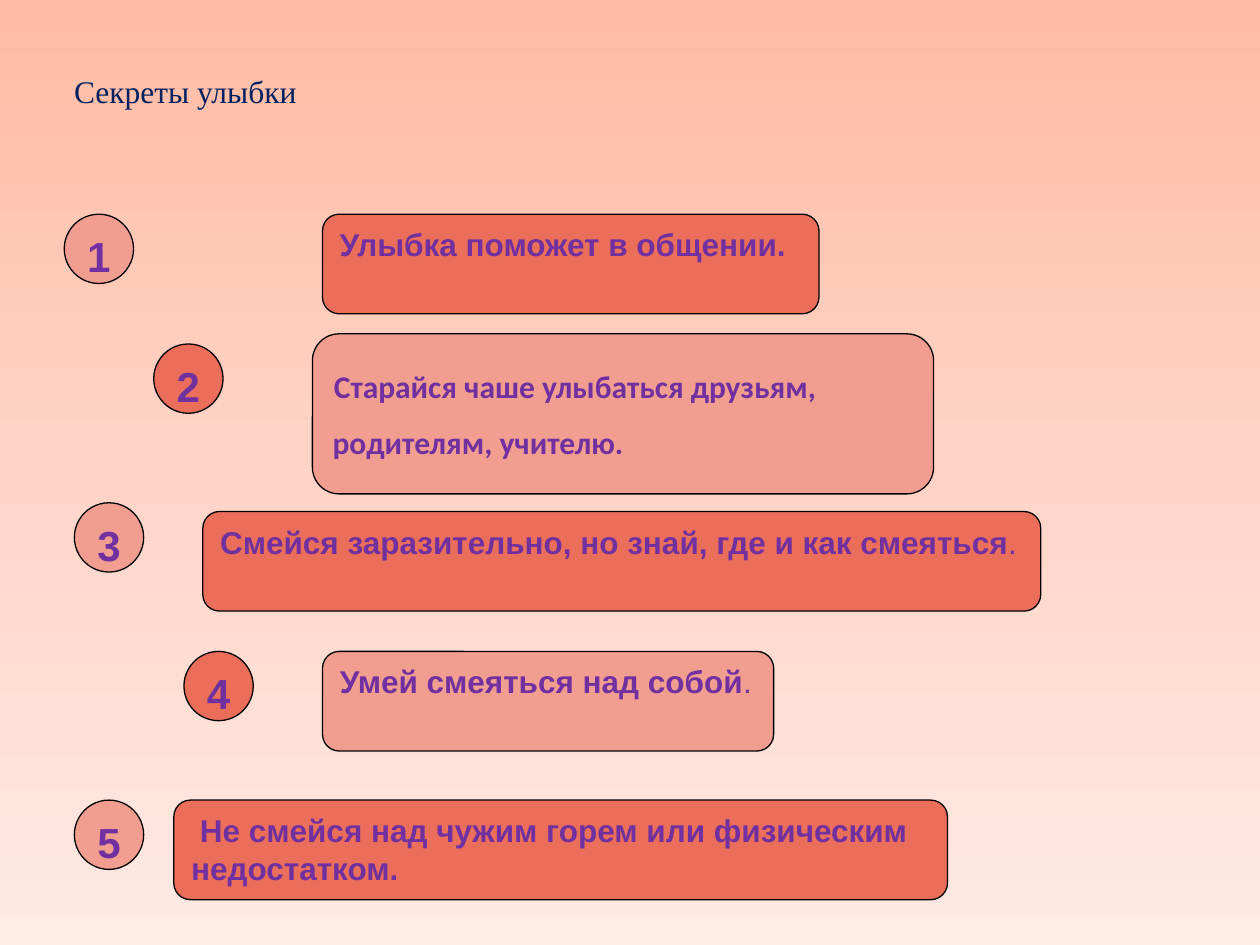
from copy import deepcopy
from dataclasses import dataclass

from pptx import Presentation
from pptx.dml.color import RGBColor
from pptx.enum.shapes import MSO_SHAPE
from pptx.enum.text import MSO_ANCHOR, PP_ALIGN
from pptx.util import Inches, Pt

OVAL = MSO_SHAPE.OVAL
ROUNDED = MSO_SHAPE.ROUNDED_RECTANGLE
TOP = MSO_ANCHOR.TOP
LEFT, CENTER = PP_ALIGN.LEFT, PP_ALIGN.CENTER


@dataclass(frozen=True)
class Theme:
    """Colours, fonts and type sizes of the slide."""
    pale: str = "F19E91"
    strong: str = "EB6E5A"
    outline: str = "000000"
    text: str = "7030A0"
    title: str = "002060"
    background: tuple = ((0, "FFBBA3"), (0.5, "FFD4C7"), (1, "FFEAE4"))
    body_font: str = "Arial"
    soft_font: str = "Calibri"
    title_font: str = "Times New Roman"
    body_size: int = 18
    number_size: int = 24


THEME = Theme()
BADGE_SIZE = 0.55

SECRETS = [
    {"badge": (0.51, 1.7), "card": (2.56, 1.7, 3.94, 0.79),
     "lines": [[("Улыбка поможет в общении.", True)]]},
    {"badge": (1.22, 2.73), "card": (2.48, 2.65, 4.93, 1.27),
     "lines": [[("Старайся чаше улыбаться друзьям, родителям, учителю.", True)]],
     "font": THEME.soft_font, "spacing": 1.5, "indent": 0.01},
    {"badge": (0.59, 3.99), "card": (1.61, 4.06, 6.65, 0.79),
     "lines": [[("Смейся заразительно, но знай, где и как смеяться", True), (".", False)]]},
    {"badge": (1.46, 5.17), "card": (2.56, 5.17, 3.58, 0.79),
     "lines": [[("Умей смеяться над собой", True), (".", False)]]},
    {"badge": (0.59, 6.35), "card": (1.38, 6.35, 6.14, 0.79),
     "lines": [[("Не смейся над чужим горем или физическим", True)],
               [("недостатком.", True)]],
     "indent": 0.07},
]


def rgb(value):
    """Turn a hex string into a colour."""
    return RGBColor.from_string(value)


def set_background(s):
    """Fill the slide with the top-to-bottom gradient."""
    fill = s.background.fill
    fill.gradient()
    fill.gradient_angle = 270
    stop_list = s.element.find(".//{*}gsLst")
    stop_list.insert(1, deepcopy(stop_list[0]))
    for stop, (position, color) in zip(fill.gradient_stops, THEME.background):
        stop.position = position
        stop.color.rgb = rgb(color)


def write_text(tf, lines, color=THEME.text, font=THEME.body_font,
               size=THEME.body_size, align=LEFT, spacing=None, indent=0):
    """Write lines of (text, bold) runs, indenting the first line."""
    tf.word_wrap = True
    tf.vertical_anchor = TOP
    for i, line in enumerate(lines):
        p = tf.add_paragraph() if i else tf.paragraphs[0]
        p.alignment = align
        if spacing:
            p.line_spacing = spacing
        if indent and not i:
            p._p.get_or_add_pPr().set("indent", str(Inches(indent)))
        for text, bold in line:
            r = p.add_run()
            r.text = text
            formats = {"name": font, "size": Pt(size), "bold": bold}
            for name, value in formats.items():
                setattr(r.font, name, value)
            r.font.color.rgb = rgb(color)


def add_title(s, text):
    """Add the slide title."""
    box = s.shapes.add_textbox(*map(Inches, (0.43, 0.52, 8.5, 1.02)))
    write_text(box.text_frame, [[(text, False)]], THEME.title,
               THEME.title_font, indent=0.06)


def add_panel(s, kind, bounds, color, lines, **formats):
    """Add an outlined shape with text."""
    sp = s.shapes.add_shape(kind, *map(Inches, bounds))
    sp.shadow.inherit = False
    sp.fill.solid()
    sp.fill.fore_color.rgb = rgb(color)
    sp.line.color.rgb = rgb(THEME.outline)
    sp.line.width = Pt(0.75)
    write_text(sp.text_frame, lines, **formats)


def add_secret(s, number, badge, card, lines, **formats):
    """Add a numbered badge and its card in alternating colours."""
    colors = (THEME.pale, THEME.strong)
    badge_color, card_color = colors if number % 2 else colors[::-1]
    add_panel(s, OVAL, (*badge, BADGE_SIZE, BADGE_SIZE), badge_color,
              [[(str(number), True)]], size=THEME.number_size, align=CENTER)
    add_panel(s, ROUNDED, card, card_color, lines, **formats)


def main():
    """Build and save the slide."""
    prs = Presentation()
    prs.slide_width, prs.slide_height = Inches(10), Inches(7.5)
    s = prs.slides.add_slide(prs.slide_layouts[6])
    set_background(s)
    add_title(s, "Секреты улыбки")
    for number, secret in enumerate(SECRETS, 1):
        add_secret(s, number, **secret)
    prs.save("out.pptx")


if __name__ == "__main__":
    main()
